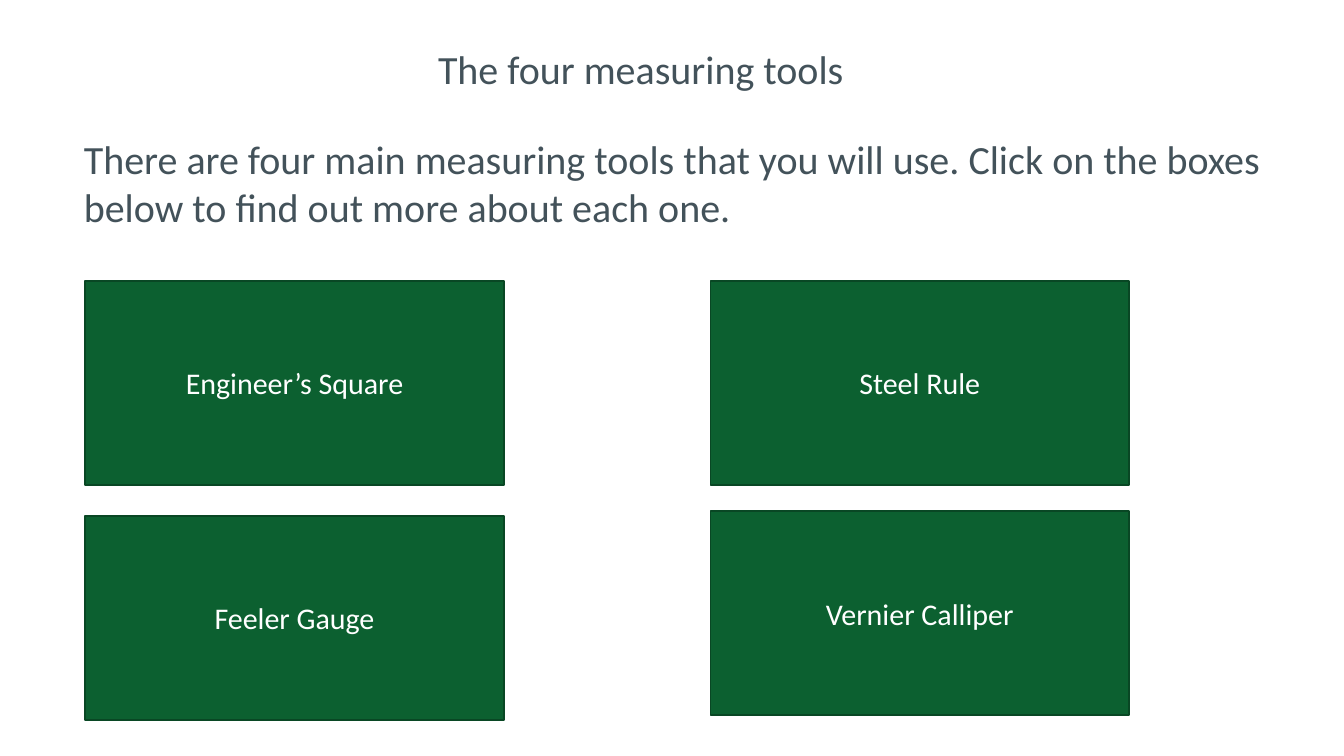
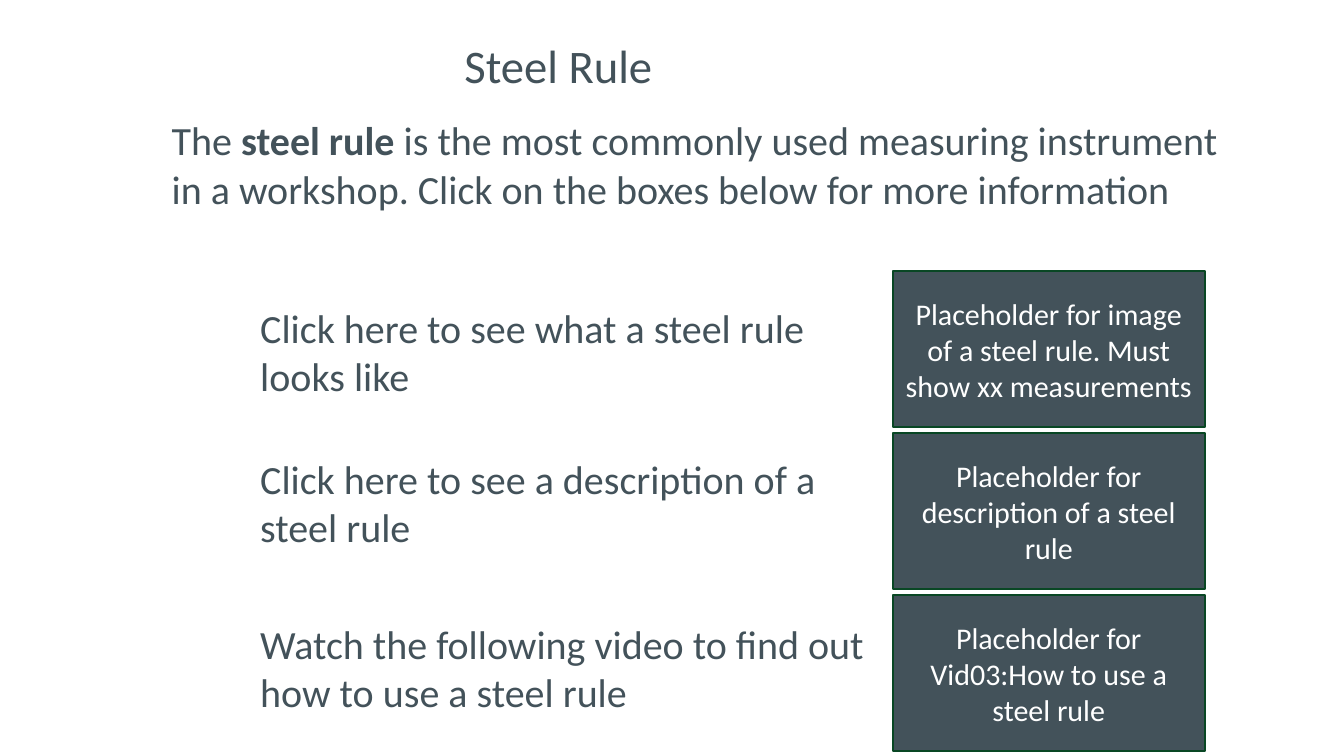
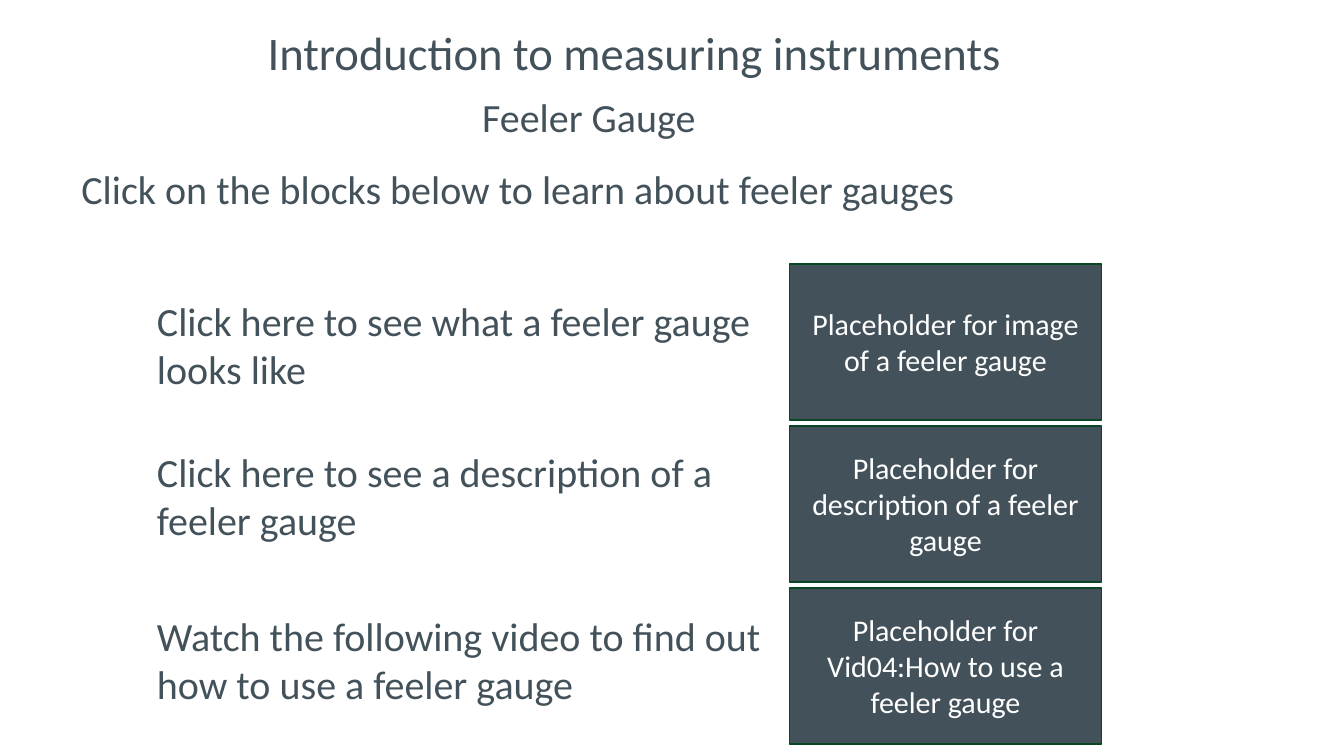
from pptx import Presentation
from pptx.dml.color import RGBColor
from pptx.enum import shapes, text
from pptx.oxml import ns, xmlchemy
from pptx.util import Inches, Pt

FONT = "Calibri"
SLATE, GREEN, EDGE, WHITE = "43525A", "0C6030", "094724", "FFFFFF"
BODY_SIZE, HEADING_SIZE, LABEL_SIZE = 24, 28, 18
TITLE_ONLY = 5


def colour(value):
    return RGBColor.from_string(value)


def place(item, box):
    item.left, item.top, item.width, item.height = map(Inches, box)


def style(para, size, ink=SLATE, align=text.PP_ALIGN.LEFT):
    para.alignment = align
    para.font.name = FONT
    para.font.size = Pt(size)
    para.font.color.rgb = colour(ink)


def fill_frame(frame, words, size):
    frame.word_wrap = True
    frame.auto_size = text.MSO_AUTO_SIZE.NONE
    frame.vertical_anchor = text.MSO_ANCHOR.TOP
    frame.text = words
    style(frame.paragraphs[0], size)


def add_page(deck, title, box, size=HEADING_SIZE):
    page = deck.slides.add_slide(deck.slide_layouts[TITLE_ONLY])
    place(page.shapes.title, box)
    fill_frame(page.shapes.title.text_frame, title, size)
    return page


def add_words(page, words, box):
    label = page.shapes.add_textbox(*map(Inches, box))
    fill_frame(label.text_frame, words, BODY_SIZE)


def add_button(page, words, box, fill):
    button = page.shapes.add_shape(shapes.MSO_SHAPE.RECTANGLE, *map(Inches, box))
    button.shadow.inherit = False
    button.fill.solid()
    button.fill.fore_color.rgb = colour(fill)
    button.line.color.rgb = colour(EDGE)
    button.line.width = Pt(1)
    frame = button.text_frame
    frame.word_wrap = True
    frame.vertical_anchor = text.MSO_ANCHOR.MIDDLE
    frame.text = words
    style(frame.paragraphs[0], LABEL_SIZE, WHITE, text.PP_ALIGN.CENTER)


def clear_borders(cell):
    properties = cell._tc.get_or_add_tcPr()
    for position, side in enumerate(("a:lnL", "a:lnR", "a:lnT", "a:lnB")):
        border = xmlchemy.OxmlElement(side)
        border.set("w", "0")
        border.append(border.makeelement(ns.qn("a:noFill")))
        properties.insert(position, border)


def add_intro_table(page, spans, box):
    """Add a one-cell table without fill or borders; spans are (words, bold) pairs."""
    table = page.shapes.add_table(1, 1, *map(Inches, box)).table
    table.first_row = table.horz_banding = False
    cell = table.cell(0, 0)
    cell.fill.background()
    clear_borders(cell)
    cell.margin_left = cell.margin_right = Inches(0.05)
    cell.margin_top, cell.margin_bottom = Inches(0.44), 0
    para = cell.text_frame.paragraphs[0]
    style(para, BODY_SIZE)
    for words, bold in spans:
        span = para.add_run()
        span.text = words
        span.font.bold = bold


def add_tool_rows(page, tool, left, top, placeholders):
    """Add three prompts, each with a placeholder block to its right."""
    prompts = (
        (f"Click here to see what a {tool} looks like", 0.22, 5.38),
        (f"Click here to see a description of a {tool}", 0.13, 5.1),
        (f"Watch the following video to find out how to use a {tool}", 0.15, 5.6),
    )
    for row, ((prompt, drop, width), subject) in enumerate(zip(prompts, placeholders)):
        row_top = top + row * 1.35
        add_button(page, f"Placeholder for {subject}", (left + 5.37, row_top, 2.6, 1.3), SLATE)
        add_words(page, prompt, (left, row_top + drop, width, 0.91))


def build_overview(deck):
    page = add_page(deck, "The four measuring tools", (3.55, 0.32, 6.84, 0.5), BODY_SIZE)
    add_words(page, "There are four main measuring tools that you will use. "
              "Click on the boxes below to find out more about each one.",
              (0.6, 1.07, 10.32, 0.91))
    tools = (
        ("Engineer’s Square", 0.71, 2.34),
        ("Steel Rule", 5.92, 2.34),
        ("Feeler Gauge", 0.71, 4.3),
        ("Vernier Calliper", 5.92, 4.26),
    )
    for name, left, top in tools:
        add_button(page, name, (left, top, 3.49, 1.7), GREEN)


def build_steel_rule(deck):
    page = add_page(deck, "Steel Rule", (3.77, 0.26, 1.8, 0.57))
    add_intro_table(page, (
        ("The ", False),
        ("steel rule ", True),
        ("is the most commonly used measuring instrument in a workshop. "
         "Click on the boxes below for more information", False),
    ), (1.38, 0.54, 9.01, 2.08))
    add_tool_rows(page, "steel rule", 2.07, 2.26, (
        "image of a steel rule. Must show xx measurements",
        "description of a steel rule",
        "Vid03:How to use a steel rule",
    ))


def build_feeler_gauge(deck):
    page = add_page(deck, "Introduction to measuring instruments", (2.13, 0.15, 6.38, 0.57))
    add_words(page, "Feeler Gauge", (3.92, 0.72, 2.33, 0.5))
    add_words(page, "Click on the blocks below to learn about feeler gauges",
              (0.58, 1.32, 9.49, 0.5))
    add_tool_rows(page, "feeler gauge", 1.21, 2.2, (
        "image of a feeler gauge",
        "description of a feeler gauge",
        "Vid04:How to use a feeler gauge",
    ))


def main():
    deck = Presentation()
    deck.slide_width, deck.slide_height = Inches(11.2), Inches(6.3)
    build_overview(deck)
    build_steel_rule(deck)
    build_feeler_gauge(deck)
    deck.save("out.pptx")


if __name__ == "__main__":
    main()
